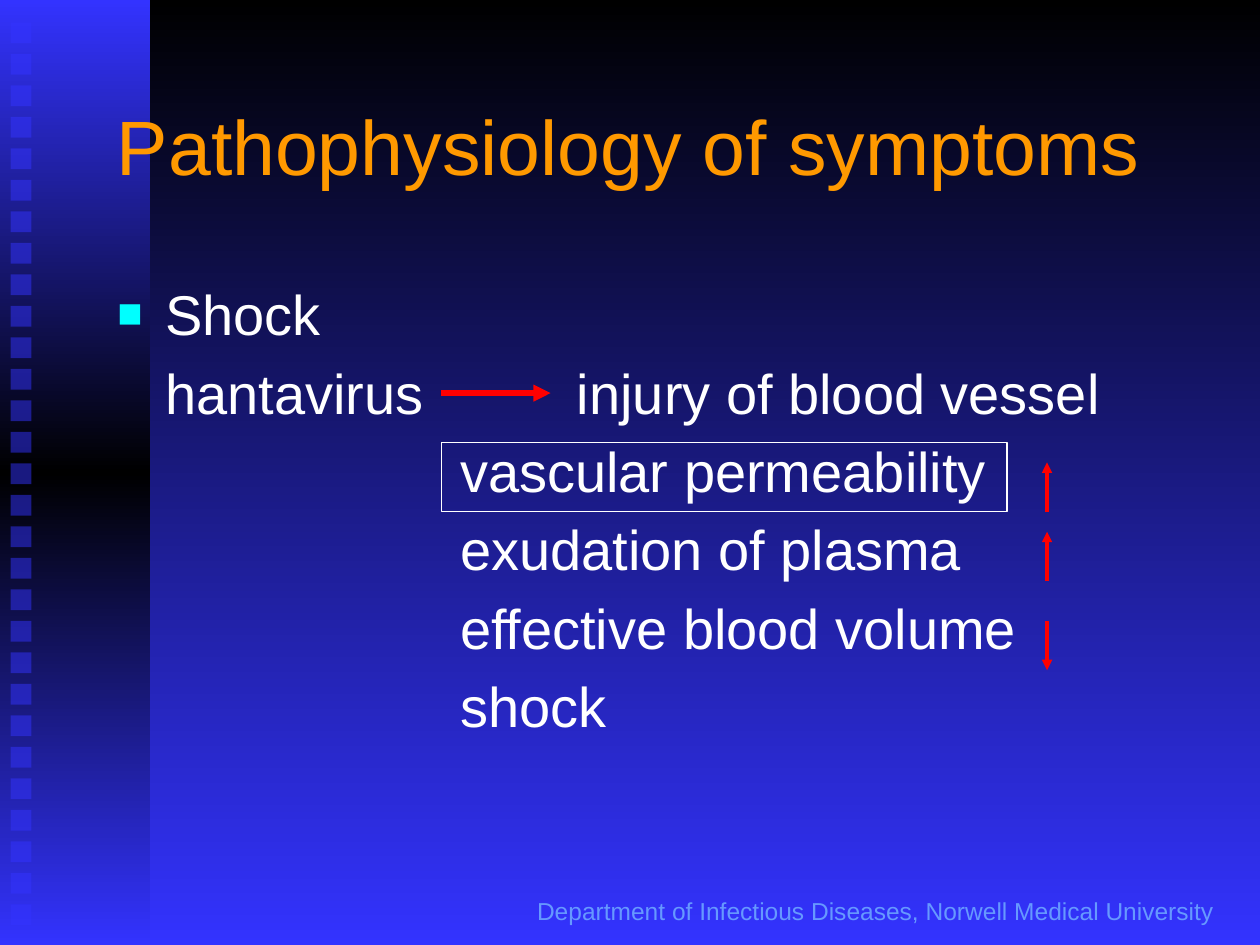
from pptx import Presentation
from pptx.dml.color import RGBColor
from pptx.enum.shapes import MSO_CONNECTOR, MSO_SHAPE
from pptx.enum.text import MSO_ANCHOR, PP_ALIGN
from pptx.oxml.ns import qn
from pptx.util import Inches, Pt
from lxml.etree import SubElement

COLORS = {
    "night": "000000", "blue": "3333FF", "title": "FF9900", "body": "FFFFFF",
    "bullet": "00FFFF", "footer": "6699FF", "arrow": "FF0000",
}
COLUMNS, ROWS = 40, 30
CELL = Inches(0.25)
HANG, EFFECTS = 1.52, 10.88  # text indents, in columns
BODY_TOP, LINE_PITCH = 8.68, 2.49  # in rows


def grid(*cells):
    return [round(cell * CELL) for cell in cells]


def color(name):
    return RGBColor.from_string(COLORS[name])


def add_xml(parent, tag, **attributes):
    return SubElement(parent, qn(tag), {key: str(value) for key, value in attributes.items()})


def set_format(target, values):
    for name, value in values.items():
        setattr(target, name, value)


def fill_gradient(fill, owner, names):
    """Spread the named colours evenly from top to bottom."""
    fill.gradient()
    fill.gradient_angle = 270
    stops = owner.xpath(".//a:gsLst")[0]
    for stop in list(stops):
        stops.remove(stop)
    for i, name in enumerate(names):
        stop = add_xml(stops, "a:gs", pos=100000 * i // (len(names) - 1))
        add_xml(stop, "a:srgbClr", val=COLORS[name])


def add_rectangle(slide, *cells):
    rectangle = slide.shapes.add_shape(MSO_SHAPE.RECTANGLE, *grid(*cells))
    rectangle.shadow.inherit = False
    rectangle.fill.background()
    rectangle.line.fill.background()
    return rectangle


def add_text_frame(slide, cells, anchor=MSO_ANCHOR.TOP):
    frame = slide.shapes.add_textbox(*grid(*cells)).text_frame
    set_format(frame, {"word_wrap": True, "vertical_anchor": anchor})
    return frame


def write(paragraph, text, size, color_name, align=PP_ALIGN.LEFT):
    run = paragraph.add_run()
    run.text = text
    paragraph.alignment = align
    set_format(run.font, {"name": "Arial", "size": Pt(size)})
    run.font.color.rgb = color(color_name)


def format_body_line(paragraph, margin, bullet=False):
    properties = paragraph._p.get_or_add_pPr()
    for name, value in zip(("marL", "indent"), grid(margin, -margin if bullet else 0)):
        properties.set(name, str(value))
    add_xml(add_xml(properties, "a:spcBef"), "a:spcPct", val=20000)
    if bullet:
        add_xml(add_xml(properties, "a:buClr"), "a:srgbClr", val=COLORS["bullet"])
        add_xml(properties, "a:buSzPct", val=75000)
        add_xml(properties, "a:buFont", typeface="Arial")
        add_xml(properties, "a:buChar", char="■")
    else:
        add_xml(properties, "a:buNone")


def add_body_text(slide, cells, lines):
    """Write lines given as (text, left margin, has bullet)."""
    frame = add_text_frame(slide, cells)
    for i, (text, margin, bullet) in enumerate(lines):
        paragraph = frame.add_paragraph() if i else frame.paragraphs[0]
        format_body_line(paragraph, margin, bullet)
        write(paragraph, text, 32, "body")


def add_arrow(slide, start, end, width):
    arrow = slide.shapes.add_connector(MSO_CONNECTOR.STRAIGHT, *grid(*start, *end))
    arrow.line.color.rgb = color("arrow")
    arrow.line.width = Pt(width)
    add_xml(arrow.line._get_or_add_ln(), "a:tailEnd", type="triangle")
    add_xml(arrow.element.spPr, "a:effectLst")


def add_side_band(slide):
    band = add_rectangle(slide, 0, 0, 4.76, ROWS)
    fill_gradient(band.fill, band.element, ["blue", "night", "blue"])
    for row in range(29):
        square = add_rectangle(slide, 0.34, 0.71 + row, 0.66, 0.66)
        square.fill.solid()
        square.fill.fore_color.rgb = color("blue")
        add_xml(square.element.xpath("./p:spPr/a:solidFill/a:srgbClr")[0], "a:alpha", val=50000)


def main():
    deck = Presentation()
    set_format(deck, {"slide_width": COLUMNS * CELL, "slide_height": ROWS * CELL})
    slide = deck.slides.add_slide(deck.slide_layouts[6])

    # Backdrop and side band
    fill_gradient(slide.background.fill, slide.element, ["night", "blue"])
    add_side_band(slide)

    # Footer and title
    footer = add_text_frame(slide, (15.92, 28.24, 23.76, 1.44))
    write(footer.paragraphs[0], "Department of Infectious Diseases, Norwell Medical University",
          14, "footer", PP_ALIGN.CENTER)
    title = add_text_frame(slide, (3.32, 2.08, 34, 5), MSO_ANCHOR.MIDDLE)
    write(title.paragraphs[0], "Pathophysiology of symptoms", 44, "title")

    # Cause and its effects, with the injury on the same line as the virus
    effects = ("vascular permeability", "exudation of plasma", "effective blood volume", "shock")
    add_body_text(slide, (3.33, BODY_TOP, 35.68, 18),
                  [("Shock", HANG, True), ("hantavirus", HANG, False)]
                  + [(effect, EFFECTS, False) for effect in effects])
    add_body_text(slide, (17.92, BODY_TOP + LINE_PITCH, 21, 2.8),
                  [("injury of blood vessel", 0, False)])

    # Cause arrow, then rise and fall arrows
    add_arrow(slide, (14, 12.48), (17.48, 12.48), 3.25)
    for start, end in ((16.24, 14.68), (18.44, 16.88), (19.72, 21.28)):
        add_arrow(slide, (33.24, start), (33.24, end), 2)

    # Frame around the key effect
    permeability = add_rectangle(slide, 14.01, 14.05, 17.96, 2.2)
    permeability.line.color.rgb = color("body")
    permeability.line.width = Pt(0.75)

    deck.save("out.pptx")


if __name__ == "__main__":
    main()
